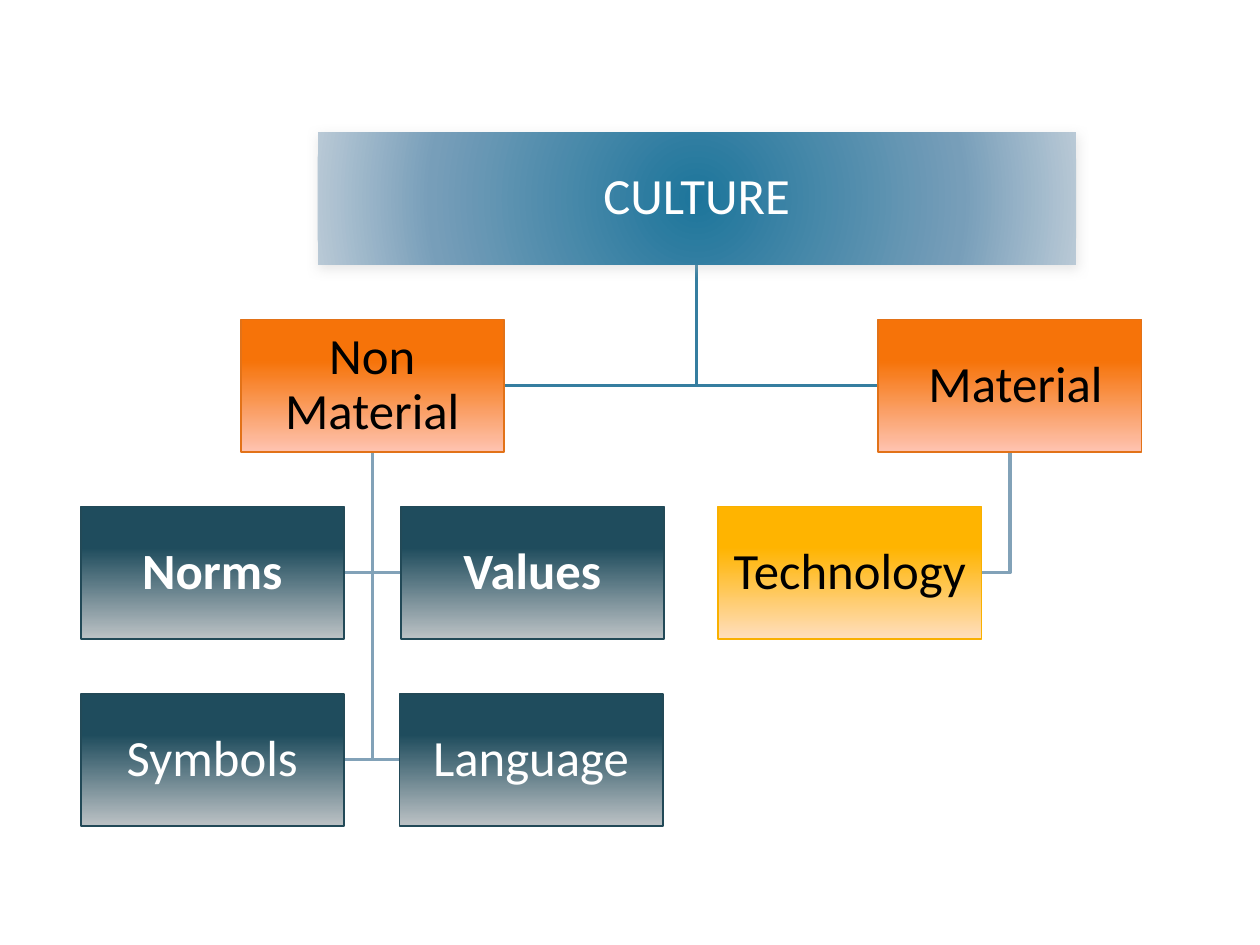
from pptx import Presentation, util as u
from pptx.dml.color import RGBColor
from pptx.enum import shapes, text
from pptx.oxml import parse_xml
from pptx.oxml.ns import qn

NS = 'xmlns:a="http://schemas.openxmlformats.org/drawingml/2006/main"'
HEX = {"white": "FFFFFF", "black": "000000", "teal": "357EA0",
       "steel": "82A2B8", "shade": "C0C0C0"}

# Box styles: gradient stops, outline, text colour
STYLE = {
    "top": ([(0, "1D759B"), (69, "779EB9"), (100, "B9C9D6")], None, "white"),
    "orange": ([(31, "F67309"), (100, "FEC3B0")], "E27218", "black"),
    "navy": ([(31, "1F4C5D"), (100, "BCC2C5")], "224957", "white"),
    "gold": ([(31, "FFB400"), (100, "FFDEBD")], "F9B000", "black"),
}

# Label, left edge, level, style, bold
BOXES = [
    ("CULTURE", 2.52, 0, "top", False),
    ("Non Material", 1.91, 1, "orange", False),
    ("Norms", 0.64, 2, "navy", True),
    ("Values", 3.18, 2, "navy", True),
    ("Symbols", 0.64, 3, "navy", False),
    ("Language", 3.17, 3, "navy", False),
    (" Material", 6.97, 1, "orange", False),
    ("Technology", 5.7, 2, "gold", False),
]

# Parent, children, line colour
LINKS = [
    (" Material", ["Technology"], "steel"),
    ("CULTURE", [" Material", "Non Material"], "teal"),
    ("Non Material", ["Language", "Symbols", "Values", "Norms"], "steel"),
]

TOP, STEP, WIDE, SLIM, HIGH = 1.05, 1.485, 6.02, 2.09, 1.05


def place(left, level, style):
    width = WIDE if style == "top" else SLIM
    return left, TOP + level * STEP, width, HIGH


def shade(shape, stops, round_):
    """Fill with a gradient, from the centre out or from the top down."""
    marks = "".join(f'<a:gs pos="{pos * 1000}"><a:srgbClr val="{col}"/></a:gs>'
                    for pos, col in stops)
    way = ('<a:path path="circle"><a:fillToRect l="50000" t="50000" '
           'r="50000" b="50000"/></a:path>' if round_
           else '<a:lin ang="5400000" scaled="0"/>')
    shape.fill.gradient()
    props = shape._element.spPr
    props.replace(props.find(qn("a:gradFill")), parse_xml(
        f'<a:gradFill {NS} rotWithShape="1"><a:gsLst>{marks}</a:gsLst>{way}</a:gradFill>'))


def drop(shape):
    """Add a soft shadow below the shape."""
    shape._element.spPr.find(qn("a:effectLst")).append(parse_xml(
        f'<a:outerShdw {NS} blurRad="{u.Pt(7)}" dist="{u.Pt(2)}" dir="5400000" '
        f'rotWithShape="0"><a:srgbClr val="{HEX["shade"]}">'
        '<a:alpha val="40000"/></a:srgbClr></a:outerShdw>'))


def write(shape, words, size=29, color="black", bold=False, font="Calibri"):
    frame = shape.text_frame
    frame.word_wrap = True
    frame.vertical_anchor = text.MSO_ANCHOR.MIDDLE
    frame.margin_left = frame.margin_right = u.Inches(0.02)
    frame.margin_top = frame.margin_bottom = u.Inches(0.02)
    para = frame.paragraphs[0]
    para.alignment = text.PP_ALIGN.CENTER
    para.line_spacing = 0.9
    run = para.add_run()
    run.text = words
    run.font.name, run.font.size, run.font.bold = font, u.Pt(size), bold
    run.font.color.rgb = RGBColor.from_string(HEX[color])


def elbow(slide, parent, child, color):
    """Run down from the parent, then across to the child's near side."""
    x = parent[0] + parent[2] / 2
    y = child[1] + child[3] / 2
    end = child[0] if child[0] > x else child[0] + child[2]
    pts = [(u.Inches(a), u.Inches(b))
           for a, b in [(x, parent[1] + parent[3]), (x, y), (end, y)]]
    pen = slide.shapes.build_freeform(*pts[0])
    pen.add_line_segments(pts[1:], close=False)
    line = pen.convert_to_shape()
    line.shadow.inherit = False
    line.fill.background()
    line.line.color.rgb = RGBColor.from_string(HEX[color])
    line.line.width = u.Pt(2)


def box(slide, label, left, level, style, bold):
    stops, edge, ink = STYLE[style]
    rect = slide.shapes.add_shape(
        shapes.MSO_SHAPE.RECTANGLE, *map(u.Inches, place(left, level, style)))
    rect.shadow.inherit = False
    shade(rect, stops, style == "top")
    if edge:
        rect.line.color.rgb = RGBColor.from_string(edge)
        rect.line.width = u.Pt(1)
    else:
        rect.line.fill.background()
        drop(rect)
    write(rect, label, color=ink, bold=bold)


def main():
    deck = Presentation()
    deck.slide_width, deck.slide_height = u.Inches(10), u.Inches(7.5)
    slide = deck.slides.add_slide(deck.slide_layouts[6])

    # Links lie behind the boxes
    spots = {name: place(left, level, style)
             for name, left, level, style, _ in BOXES}
    for parent, kids, color in LINKS:
        for kid in kids:
            elbow(slide, spots[parent], spots[kid], color)

    # Boxes
    for item in BOXES:
        box(slide, *item)

    deck.save("out.pptx")


if __name__ == "__main__":
    main()
